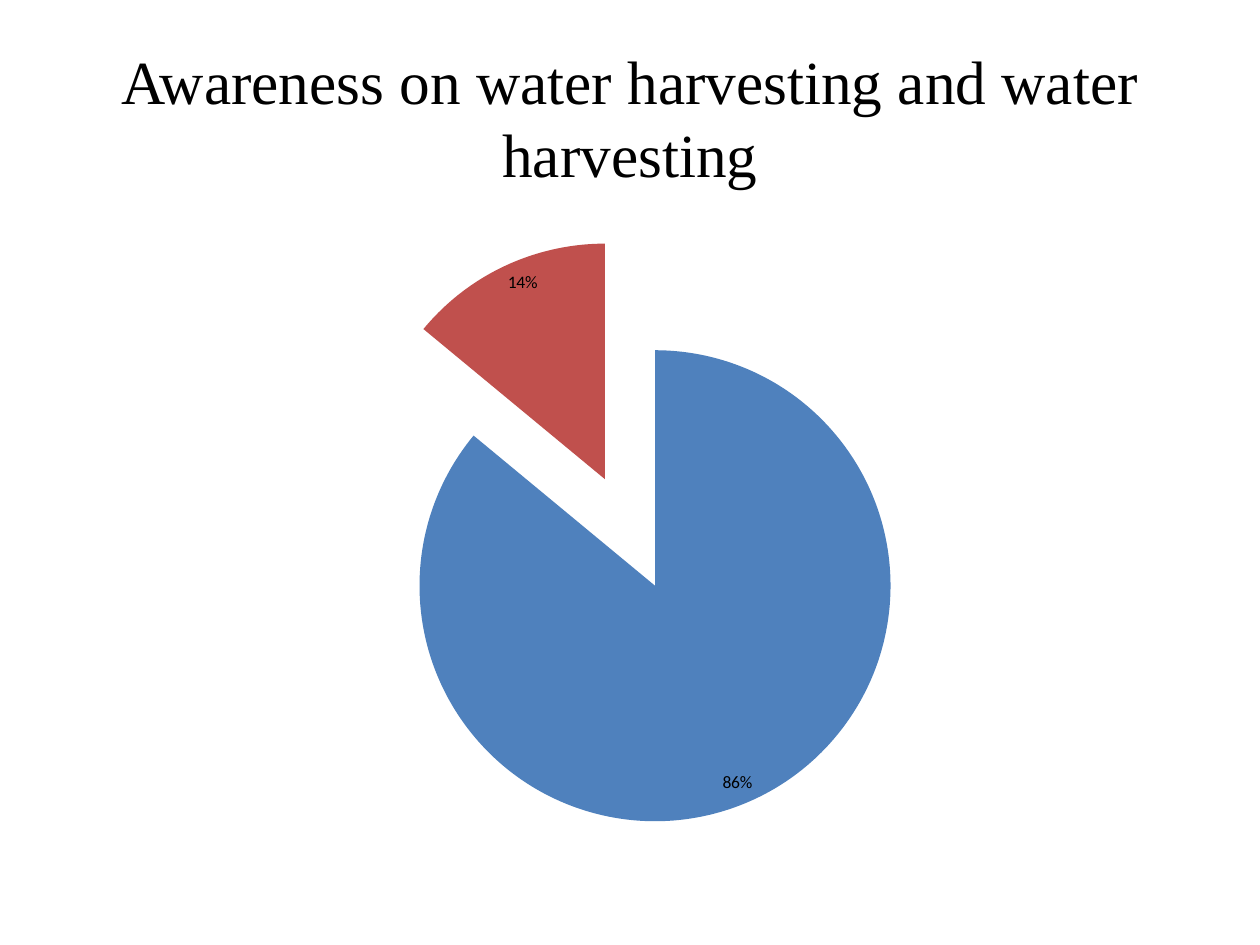
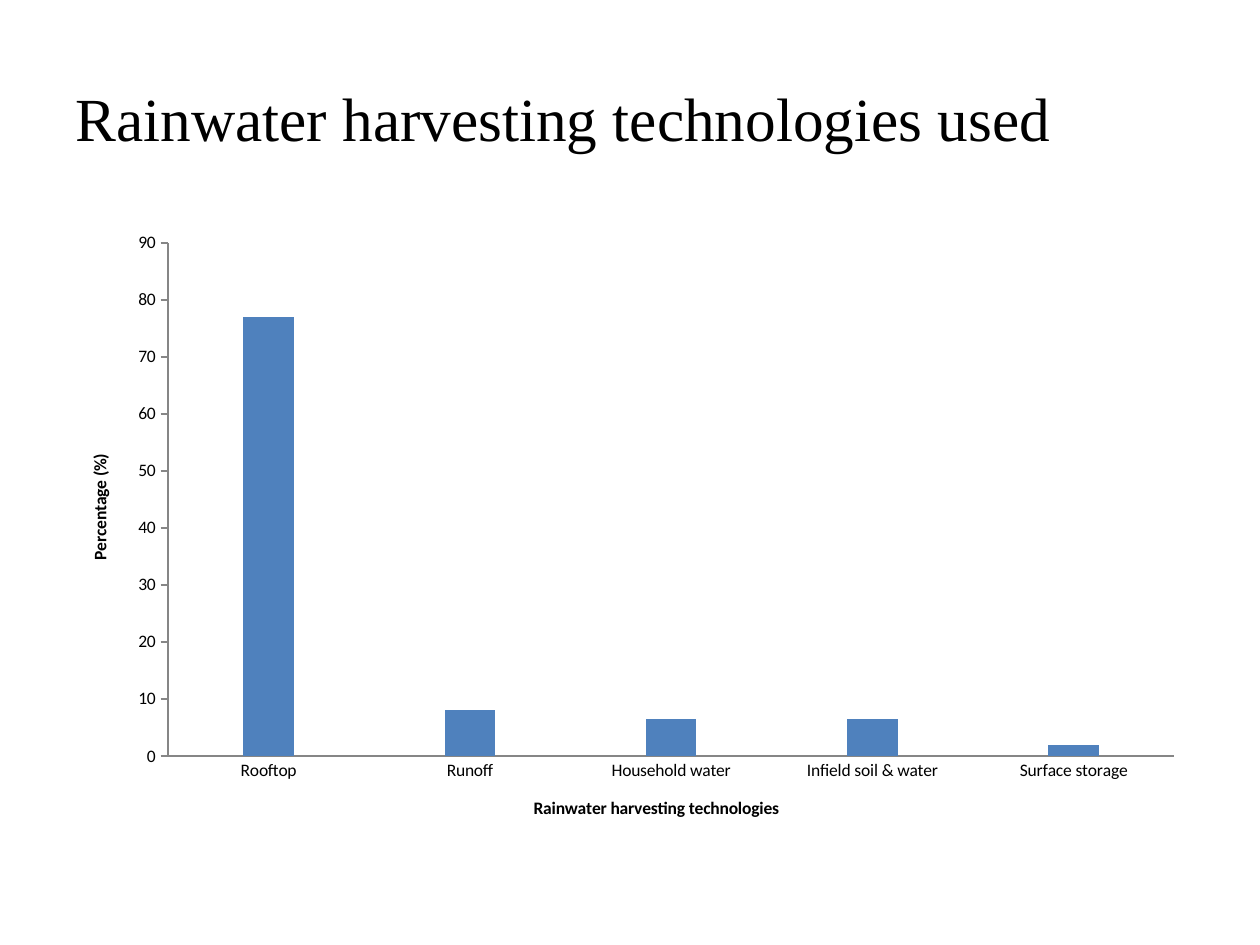
"""Build two slides on awareness and use of rainwater harvesting."""
import pptx
import pptx.chart.data
import pptx.dml.color
import pptx.enum.chart
import pptx.enum.text
import pptx.oxml
import pptx.oxml.ns
import pptx.util
from pptx.util import Cm

BLACK, BLUE, RED, GREY = "000000", "4F81BD", "C0504D", "868686"
TITLE_FONT, CHART_FONT = "Times New Roman", "Calibri"
LEFT, WIDTH = Cm(1.27), Cm(22.86)
TITLE_BOX = LEFT, Cm(0.76), WIDTH, Cm(3.18)
CHART_BOX = LEFT, Cm(4.45), WIDTH, Cm(12.57)


def rgb(color):
    """Turn a hex string into a colour."""
    return pptx.dml.color.RGBColor.from_string(color)


def fill_solid(part, color):
    """Fill a chart part with one colour."""
    part.format.fill.solid()
    part.format.fill.fore_color.rgb = rgb(color)


def format_font(font, size=10, name=CHART_FONT, color=BLACK, bold=False):
    """Set the face, size, weight and colour of a font."""
    font.name, font.size, font.bold = name, pptx.util.Pt(size), bold
    font.color.rgb = rgb(color)


def write_text(frame, text, align=pptx.enum.text.PP_ALIGN.CENTER, **font_format):
    """Put one formatted paragraph in a text frame."""
    paragraph = frame.paragraphs[0]
    paragraph.alignment = align
    run = paragraph.add_run()
    run.text = text
    format_font(run.font, **font_format)


def add_titled_slide(deck, heading, align):
    """Add a title-only slide and set its heading."""
    slide = deck.slides.add_slide(deck.slide_layouts[5])
    title = slide.shapes.title
    title.left, title.top, title.width, title.height = TITLE_BOX
    frame = title.text_frame
    frame.word_wrap = True
    frame.auto_size = pptx.enum.text.MSO_AUTO_SIZE.NONE
    frame.vertical_anchor = pptx.enum.text.MSO_ANCHOR.MIDDLE
    write_text(frame, heading, align, size=35, name=TITLE_FONT)
    return slide


def add_chart(slide, kind, categories, values):
    """Add a one-series chart with the shared place and font."""
    data = pptx.chart.data.CategoryChartData()
    data.categories = categories
    data.add_series("Series 1", values)
    chart = slide.shapes.add_chart(kind, *CHART_BOX, data).chart
    chart.has_title = False
    chart.has_legend = False
    format_font(chart.font)
    return chart


def explode_slices(chart, percent):
    """Move all slices of a pie away from its centre."""
    first_point = chart.element.xpath(".//c:ser/c:dPt")[0]
    first_point.addprevious(pptx.oxml.parse_xml(
        f'<c:explosion {pptx.oxml.ns.nsdecls("c")} val="{percent}"/>'))


def add_awareness_pie(slide):
    """Add the exploded pie of awareness shares."""
    chart = add_chart(slide, pptx.enum.chart.XL_CHART_TYPE.PIE, ["1", "2"], [86, 14])
    plot = chart.plots[0]
    plot.vary_by_categories = True
    for index, color in enumerate([BLUE, RED]):
        fill_solid(plot.series[0].points[index], color)
    explode_slices(chart, 25)
    plot.has_data_labels = True
    labels = plot.data_labels
    labels.show_value = False
    labels.show_percentage = True
    labels.number_format, labels.number_format_is_linked = "0%", False
    labels.position = pptx.enum.chart.XL_LABEL_POSITION.INSIDE_END
    format_font(labels.font)


def style_axis(axis, title, tick):
    """Title an axis and set its line, ticks and font."""
    axis.has_major_gridlines = False
    axis.major_tick_mark = tick
    axis.minor_tick_mark = pptx.enum.chart.XL_TICK_MARK.NONE
    axis.format.line.color.rgb = rgb(GREY)
    axis.format.line.width = pptx.util.Pt(0.75)
    format_font(axis.tick_labels.font)
    write_text(axis.axis_title.text_frame, title, bold=True)


def add_technology_columns(slide):
    """Add the column chart of technologies used."""
    technologies = ["Rooftop", "Runoff", "Household water",
                    "Infield soil & water", "Surface storage"]
    chart = add_chart(slide, pptx.enum.chart.XL_CHART_TYPE.COLUMN_CLUSTERED,
                      technologies, [77, 8, 6.5, 6.5, 2])
    plot = chart.plots[0]
    plot.vary_by_categories = False
    plot.gap_width = 300
    fill_solid(plot.series[0], BLUE)
    ticks = pptx.enum.chart.XL_TICK_MARK
    style_axis(chart.category_axis, "Rainwater harvesting technologies", ticks.NONE)
    style_axis(chart.value_axis, "Percentage (%)", ticks.OUTSIDE)
    chart.value_axis.minimum_scale = 0
    chart.value_axis.maximum_scale = 90
    chart.value_axis.major_unit = 10


def main():
    """Build and save the deck."""
    deck = pptx.Presentation()
    deck.slide_width, deck.slide_height = Cm(25.4), Cm(19.05)
    align = pptx.enum.text.PP_ALIGN
    add_awareness_pie(add_titled_slide(
        deck, "Awareness on water harvesting and water harvesting", align.CENTER))
    add_technology_columns(add_titled_slide(
        deck, "Rainwater harvesting technologies used", align.JUSTIFY))
    deck.save("out.pptx")


if __name__ == "__main__":
    main()
